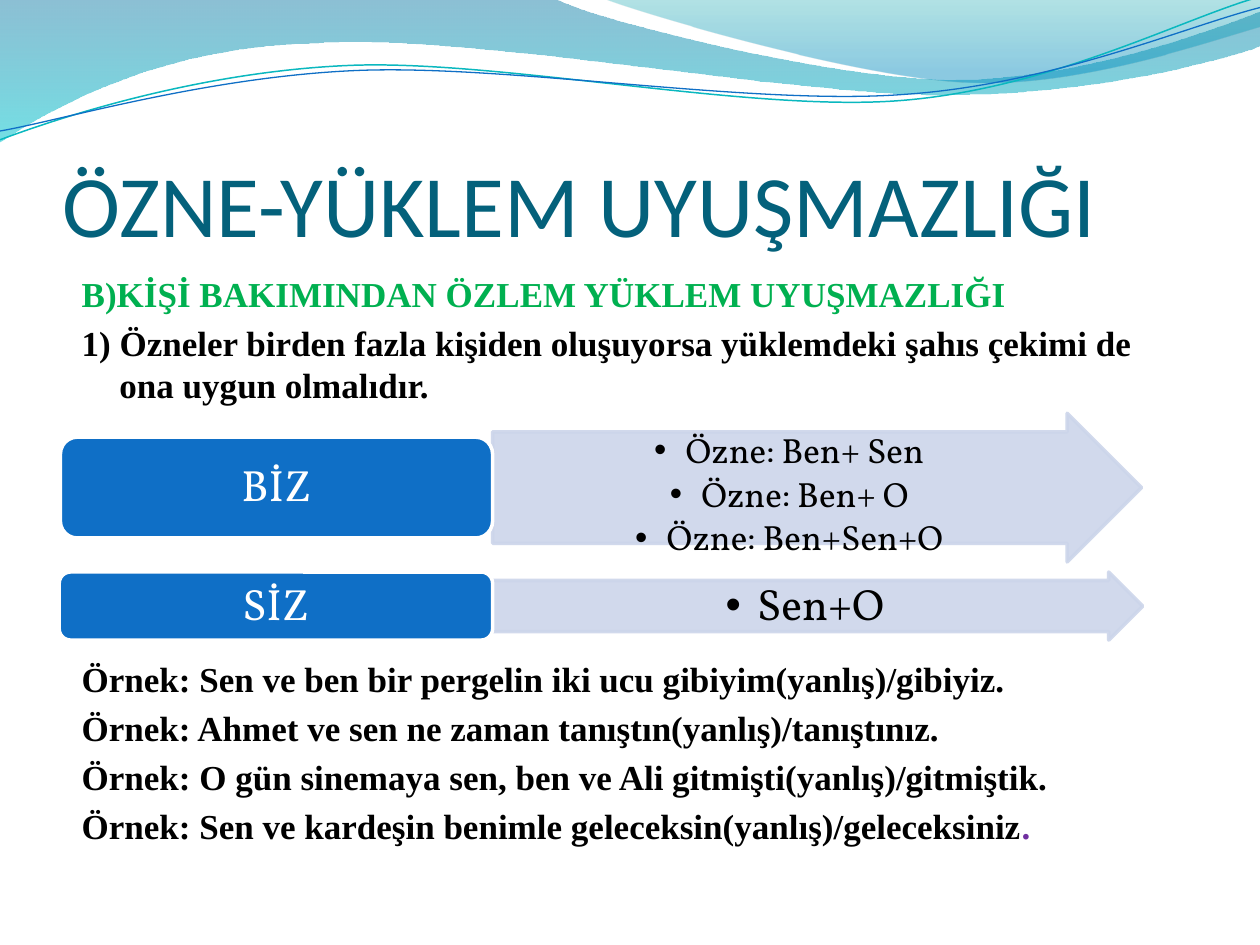
from dataclasses import dataclass

from lxml.etree import SubElement
from pptx import Presentation
from pptx.dml.color import RGBColor
from pptx.enum.shapes import MSO_SHAPE
from pptx.enum.text import MSO_ANCHOR, PP_ALIGN
from pptx.oxml.ns import qn
from pptx.util import Inches, Pt


@dataclass(frozen=True)
class Theme:
    title: str = "04617B"
    heading: str = "00B050"
    text: str = "000000"
    accent: str = "7030A0"
    blue: str = "0F6FC6"
    teal: str = "0AB8BF"
    arrow: str = "CCD5EA"
    white: str = "FFFFFF"
    title_font: str = "Calibri"
    body_font: str = "Times New Roman"
    diagram_font: str = "Vollkorn"
    title_size: int = 50
    body_size: int = 20
    label_size: int = 25


T = Theme()

# Each wave is a start point followed by segments: 2 numbers a line, 6 a curve.
BACK_WAVE = [(0, 0), (4.4, -0.01), (4.76, 0.17, 6.64, 0.63, 7.58, 0.63),
             (8.53, 0.63, 9.58, 0.26, 10, 0.09), (10.01, 0.36),
             (9.83, 0.44, 8.7, 0.76, 7.46, 0.75), (6.22, 0.75, 3.82, 0.28, 2.57, 0.34),
             (1.29, 0.36, 0.46, 0.83, -0.01, 1.13), (0, 0)]
FRONT_WAVE = [(4.79, -0.01), (5.09, 0.11, 6.82, 0.62, 7.69, 0.65),
              (8.56, 0.69, 9.61, 0.32, 10, 0.21), (10, 0), (4.79, -0.01)]
TEAL_CURVE = [(0, 1.11), (0.48, 0.93, 1.58, 0.57, 2.77, 0.52),
              (3.95, 0.47, 5.93, 0.89, 7.13, 0.8), (8.33, 0.71, 9.38, 0.15, 9.98, -0.02)]
BLUE_CURVE = [(0, 1.04), (0.47, 0.96, 1.64, 0.61, 2.83, 0.56),
              (4.03, 0.51, 5.97, 0.84, 7.17, 0.75), (8.36, 0.67, 9.41, 0.21, 10, 0.06)]


def rgb(color):
    return RGBColor.from_string(color)


def set_attrs(obj, values):
    for name, value in values.items():
        setattr(obj, name, value)


def set_alpha(parent, percent):
    """Make every colour below parent partly transparent."""
    for clr in parent.iter(qn("a:srgbClr")):
        SubElement(clr, qn("a:alpha"), val=str(percent * 1000))


def add_path(s, segments, close):
    """Build an outline, then join the points of each curve into one cubic."""
    points = [(Inches(seg[i]), Inches(seg[i + 1]))
              for seg in segments for i in range(0, len(seg), 2)]
    builder = s.shapes.build_freeform(*points[0], scale=1.0)
    builder.add_line_segments(points[1:], close=close)
    sp = builder.convert_to_shape()
    sp.shadow.inherit = False
    path = next(sp.element.iter(qn("a:path")))
    lines = iter(path.findall(qn("a:lnTo")))
    for seg in segments[1:]:
        first = next(lines)
        if len(seg) == 6:
            curve = path.makeelement(qn("a:cubicBezTo"))
            first.addprevious(curve)
            for line in (first, next(lines), next(lines)):
                curve.append(line[0])
                path.remove(line)
    return sp


def add_wave(s, segments, stops):
    sp = add_path(s, segments, True)
    sp.line.fill.background()
    sp.fill.gradient()
    sp.fill.gradient_angle = 270
    gs_elements = sp.element.spPr.iter(qn("a:gs"))
    for stop, gs, (position, color, alpha) in zip(sp.fill.gradient_stops, gs_elements, stops):
        stop.position = position
        stop.color.rgb = rgb(color)
        set_alpha(gs, alpha)


def add_curve(s, segments, color, width):
    sp = add_path(s, segments, False)
    sp.fill.background()
    sp.line.color.rgb = rgb(color)
    sp.line.width = Pt(width)


def add_header(s):
    add_wave(s, BACK_WAVE, [(0, "0074A1", 45), (1, "00C6CF", 55)])
    add_wave(s, FRONT_WAVE, [(0, "00A1A9", 30), (0.8, "008BBF", 45)])
    add_curve(s, TEAL_CURVE, T.teal, 0.85)
    add_curve(s, BLUE_CURVE, T.blue, 0.75)


def add_run(p, text, font, size, color, bold=False):
    r = p.add_run()
    r.text = text
    set_attrs(r.font, {"name": font, "size": Pt(size), "bold": bold})
    r.font.color.rgb = rgb(color)


def set_indent(p, hanging, bullet=None):
    pPr = p._p.get_or_add_pPr()
    pPr.set("marL", str(Inches(hanging)))
    pPr.set("indent", str(-Inches(hanging)))
    if bullet:
        SubElement(pPr, qn("a:buFont"), typeface="Arial")
        SubElement(pPr, qn("a:buChar"), char=bullet)


def paragraphs(tf, count):
    return [tf.paragraphs[0]] + [tf.add_paragraph() for _ in range(count - 1)]


def set_frame(tf, anchor, left, top, right, bottom):
    set_attrs(tf, {"word_wrap": True, "vertical_anchor": anchor,
                   "margin_left": Inches(left), "margin_top": Inches(top),
                   "margin_right": Inches(right), "margin_bottom": Inches(bottom)})


def add_title(s, box, text):
    tf = s.shapes.add_textbox(*map(Inches, box)).text_frame
    set_frame(tf, MSO_ANCHOR.BOTTOM, 0, 0.05, 0, 0)
    add_run(tf.paragraphs[0], text, T.title_font, T.title_size, T.title)


def add_body(s, box, lines):
    """Place paragraphs, each a list of (text, colour) runs."""
    tf = s.shapes.add_textbox(*map(Inches, box)).text_frame
    set_frame(tf, MSO_ANCHOR.TOP, 0.1, 0.05, 0.1, 0.05)
    for p, runs in zip(paragraphs(tf, len(lines)), lines):
        p.space_before = Pt(T.body_size * 0.2)
        set_indent(p, 0.3)
        for text, color in runs:
            add_run(p, text, T.body_font, T.body_size, color, True)


def add_block(s, kind, box, fill, line):
    sp = s.shapes.add_shape(kind, *map(Inches, box))
    sp.shadow.inherit = False
    sp.fill.solid()
    sp.fill.fore_color.rgb = rgb(fill)
    sp.line.color.rgb = rgb(line)
    sp.line.width = Pt(2)
    return sp


def add_person_row(s, label_box, arrow_box, label, items, size, inset):
    """Place a label and the arrow that lists its subjects."""
    centred = {"alignment": PP_ALIGN.CENTER, "line_spacing": 0.9}
    arrow = add_block(s, MSO_SHAPE.RIGHT_ARROW, arrow_box, T.arrow, T.arrow)
    arrow.adjustments[0], arrow.adjustments[1] = 0.75, 0.5
    set_alpha(arrow.element.spPr, 90)
    set_frame(arrow.text_frame, MSO_ANCHOR.TOP, *[inset] * 4)
    for p, item in zip(paragraphs(arrow.text_frame, len(items)), items):
        set_attrs(p, {**centred, "space_after": Pt(3.4)})
        set_indent(p, 0.25, "•")
        add_run(p, item, T.diagram_font, size, T.text)

    sp = add_block(s, MSO_SHAPE.ROUNDED_RECTANGLE, label_box, T.blue, T.white)
    set_frame(sp.text_frame, MSO_ANCHOR.MIDDLE, 0.1, 0.05, 0.1, 0.05)
    p = sp.text_frame.paragraphs[0]
    set_attrs(p, centred)
    add_run(p, label, T.diagram_font, T.label_size, T.white)


def main():
    prs = Presentation()
    set_attrs(prs, {"slide_width": Inches(10), "slide_height": Inches(7.5)})
    s = prs.slides.add_slide(prs.slide_layouts[6])
    add_header(s)
    add_title(s, (0.5, 0.77, 9, 1.25), "ÖZNE-YÜKLEM UYUŞMAZLIĞI")
    add_body(s, (0.55, 2.11, 9, 1.15), [
        [("B)KİŞİ BAKIMINDAN ÖZLEM YÜKLEM UYUŞMAZLIĞI", T.heading)],
        [("1) Özneler birden fazla kişiden oluşuyorsa yüklemdeki şahıs çekimi de "
          "ona uygun olmalıdır.", T.text)]])
    add_body(s, (0.55, 5.17, 9, 1.74), [
        [("Örnek: Sen ve ben bir pergelin iki ucu gibiyim(yanlış)/gibiyiz.", T.text)],
        [("Örnek: Ahmet ve sen ne zaman tanıştın(yanlış)/tanıştınız.", T.text)],
        [("Örnek: O gün sinemaya sen, ben ve Ali gitmişti(yanlış)/gitmiştik.", T.text)],
        [("Örnek: Sen ve kardeşin benimle geleceksin(yanlış)/geleceksiniz", T.text),
         (".", T.accent)]])
    add_person_row(s, (0.48, 3.47, 3.43, 0.8), (3.91, 3.28, 5.15, 1.18), "BİZ",
                   ["Özne: Ben+ Sen", "Özne: Ben+ O", "Özne: Ben+Sen+O"], T.body_size, 0.01)
    add_person_row(s, (0.47, 4.54, 3.44, 0.54), (3.91, 4.54, 5.16, 0.54), "SİZ",
                   ["Sen+O"], T.label_size, 0.02)
    prs.save("out.pptx")


if __name__ == "__main__":
    main()
